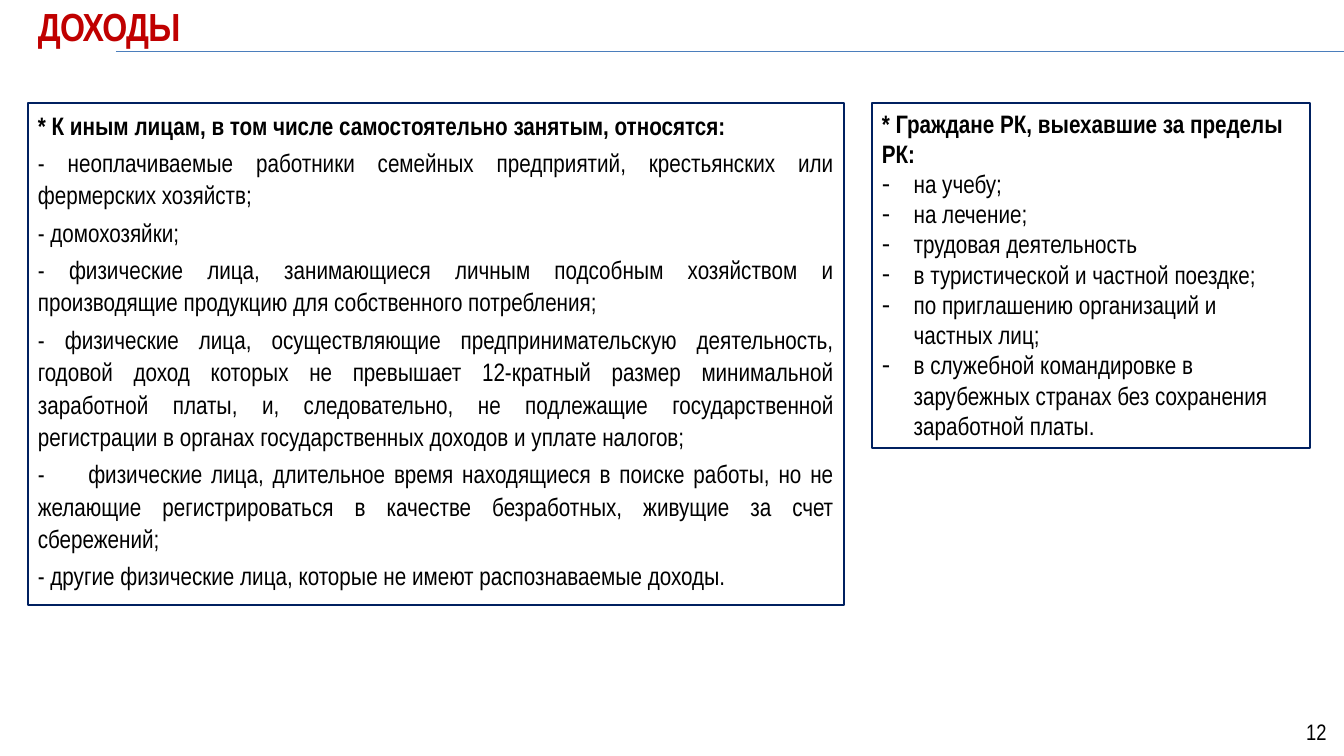
from dataclasses import dataclass

import lxml.etree
import pptx
import pptx.dml.color
import pptx.enum.shapes
import pptx.enum.text
import pptx.oxml.ns
import pptx.shapes.base
import pptx.text.text
import pptx.util

RED = pptx.dml.color.RGBColor(0xC0, 0x00, 0x00)
NAVY = pptx.dml.color.RGBColor(0x00, 0x20, 0x60)
BLUE = pptx.dml.color.RGBColor(0x4B, 0x7E, 0xBC)
BLACK = pptx.dml.color.RGBColor(0x00, 0x00, 0x00)
FONT = "Arial Narrow"
ALIGN = pptx.enum.text.PP_ALIGN
MIDDLE = pptx.enum.text.MSO_ANCHOR.MIDDLE
FIXED_SIZE = pptx.enum.text.MSO_AUTO_SIZE.NONE
Cm, Pt = pptx.util.Cm, pptx.util.Pt
SLIDE_WIDTH, SLIDE_HEIGHT = Cm(33.87), Cm(19.05)
LEFT_MARGIN = Cm(0.7)
RULE_Y = Cm(1.3)
PANEL_TOP = Cm(2.59)
HANGING_INDENT = Cm(0.8)
DASH_TAB = Cm(0.97)


@dataclass
class Panel:
    left: pptx.util.Length
    width: pptx.util.Length
    height: pptx.util.Length
    heading: str
    items: list[str]
    bulleted: bool
    alignment: ALIGN
    line_spacing: float
    space_before: pptx.util.Length


PANELS = [
    Panel(
        LEFT_MARGIN, Cm(20.57), Cm(12.65),
        "* К иным лицам, в том числе самостоятельно занятым, относятся:",
        [
            "- неоплачиваемые работники семейных предприятий, крестьянских или "
            "фермерских хозяйств;",
            "- домохозяйки;",
            "- физические лица, занимающиеся личным подсобным хозяйством и "
            "производящие продукцию для собственного потребления;",
            "- физические лица, осуществляющие предпринимательскую деятельность, "
            "годовой доход которых не превышает 12-кратный размер минимальной "
            "заработной платы, и, следовательно, не подлежащие государственной "
            "регистрации в органах государственных доходов и уплате налогов;",
            "-\tфизические лица, длительное время находящиеся в поиске работы, но не "
            "желающие регистрироваться в качестве безработных, живущие за счет "
            "сбережений;",
            "- другие физические лица, которые не имеют распознаваемые доходы.",
        ],
        False, ALIGN.JUSTIFY, 1.07, Pt(3.6),
    ),
    Panel(
        Cm(21.97), Cm(11.05), Cm(8.71),
        "* Граждане РК, выехавшие за пределы РК:",
        [
            "на учебу;",
            "на лечение;",
            "трудовая деятельность",
            "в туристической и частной поездке;",
            "по приглашению организаций и частных лиц;",
            "в служебной командировке в зарубежных странах без сохранения "
            "заработной платы.",
        ],
        True, ALIGN.LEFT, 1.0, Pt(0),
    ),
]


def place(shape: pptx.shapes.base.BaseShape, left: int, top: int, width: int, height: int) -> None:
    shape.left, shape.top, shape.width, shape.height = left, top, width, height


def set_font(paragraph: pptx.text.text._Paragraph, size: int,
             color: pptx.dml.color.RGBColor = BLACK, bold: bool = False) -> None:
    font = paragraph.font
    font.name, font.size, font.bold = FONT, Pt(size), bold
    font.color.rgb = color


def set_bullet(paragraph: pptx.text.text._Paragraph, bulleted: bool) -> None:
    """Give a hanging dash, or clear the inherited bullet and set the dash tab."""
    properties = paragraph._p.get_or_add_pPr()
    indent = HANGING_INDENT if bulleted else 0
    properties.set("marL", str(indent))
    properties.set("indent", str(-indent))
    qn = pptx.oxml.ns.qn
    if bulleted:
        lxml.etree.SubElement(properties, qn("a:buChar"), char="-")
        return
    lxml.etree.SubElement(properties, qn("a:buNone"))
    if "\t" in paragraph.text:
        tabs = lxml.etree.SubElement(properties, qn("a:tabLst"))
        lxml.etree.SubElement(tabs, qn("a:tab"), pos=str(DASH_TAB), algn="l")


def fill_panel(body: pptx.shapes.base.BaseShape, panel: Panel) -> None:
    place(body, panel.left, PANEL_TOP, panel.width, panel.height)
    body.line.color.rgb = NAVY
    body.line.width = Pt(1.5)
    frame = body.text_frame
    frame.auto_size = FIXED_SIZE
    frame.text = "\n".join([panel.heading, *panel.items])
    for index, paragraph in enumerate(frame.paragraphs):
        is_heading = index == 0
        set_bullet(paragraph, panel.bulleted and not is_heading)
        paragraph.alignment = panel.alignment
        paragraph.line_spacing = panel.line_spacing
        paragraph.space_before = panel.space_before
        set_font(paragraph, 18, bold=is_heading)


def main() -> None:
    presentation = pptx.Presentation()
    presentation.slide_width, presentation.slide_height = SLIDE_WIDTH, SLIDE_HEIGHT
    slide = presentation.slides.add_slide(presentation.slide_layouts.get_by_name("Two Content"))
    title, *bodies = slide.placeholders

    rule = slide.shapes.add_connector(
        pptx.enum.shapes.MSO_CONNECTOR.STRAIGHT, Cm(2.92), RULE_Y, SLIDE_WIDTH, RULE_Y)
    rule.line.color.rgb = BLUE
    rule.line.width = Pt(0.75)
    lxml.etree.SubElement(rule._element.spPr, pptx.oxml.ns.qn("a:effectLst"))

    place(title, LEFT_MARGIN, 0, Cm(31.09), RULE_Y)
    title.text_frame.text = "ДОХОДЫ"
    title.text_frame.vertical_anchor = MIDDLE
    title.text_frame.auto_size = FIXED_SIZE
    heading = title.text_frame.paragraphs[0]
    heading.alignment = ALIGN.LEFT
    set_font(heading, 28, RED, bold=True)
    heading.runs[0]._r.get_or_add_rPr().set("spc", "-50")

    for body, panel in zip(bodies, PANELS):
        fill_panel(body, panel)

    page_number = slide.shapes.add_textbox(Cm(31.57), Cm(17.93), Cm(2.11), Cm(1.02)).text_frame
    page_number.word_wrap = True
    page_number.vertical_anchor = MIDDLE
    page_number.text = "12"
    page_number.paragraphs[0].alignment = ALIGN.RIGHT
    set_font(page_number.paragraphs[0], 16)

    presentation.save("out.pptx")


if __name__ == "__main__":
    main()
